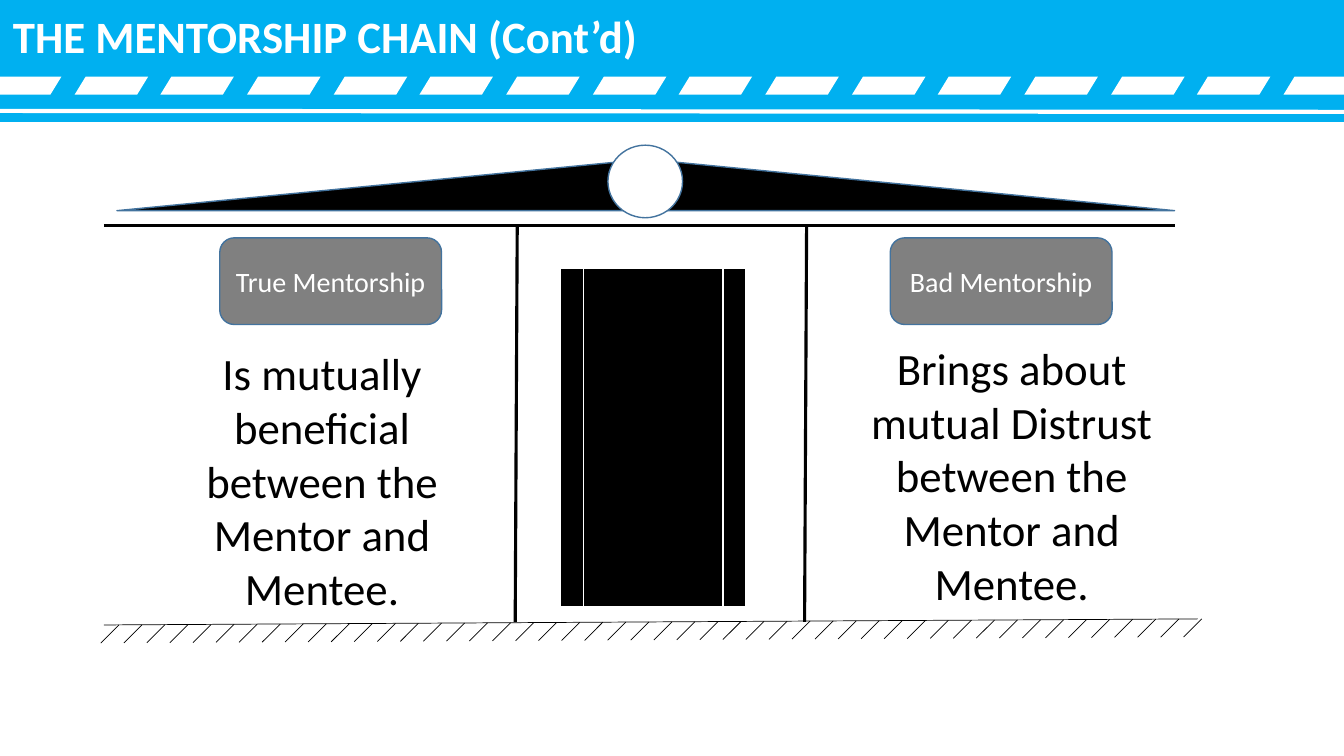
from lxml import etree
from pptx import Presentation
from pptx.dml.color import RGBColor
from pptx.enum import shapes, text
from pptx.oxml.ns import qn
from pptx.util import Pt

PX = 9144
FONT = "Calibri"
COLORS = {
    "sky": "00B0F0",
    "white": "FFFFFF",
    "black": "000000",
    "gray": "808080",
    "edge": "43739E",
}
SHAPE = shapes.MSO_SHAPE


def rgb(name):
    return RGBColor.from_string(COLORS[name])


def paint(item, fill, edge=None):
    item.shadow.inherit = False
    item.fill.solid()
    item.fill.fore_color.rgb = rgb(fill)
    if edge:
        item.line.color.rgb = rgb(edge)
        item.line.width = Pt(1)
    else:
        item.line.fill.background()
    return item


def add_figure(parent, kind, box, fill, edge=None):
    return paint(parent.add_shape(kind, *(n * PX for n in box)), fill, edge)


def add_line(parent, start, end, color, width):
    ends = (round(n * PX) for n in (*start, *end))
    line = parent.add_connector(shapes.MSO_CONNECTOR.STRAIGHT, *ends)
    line.line.color.rgb = rgb(color)
    line.line.width = Pt(width)
    etree.SubElement(line._element.spPr, qn("a:effectLst"))


def write(frame, words, size, color, align, bold=False):
    frame.word_wrap = True
    paragraph = frame.paragraphs[0]
    paragraph.alignment = align
    run = paragraph.add_run()
    run.text = words
    run.font.name = FONT
    run.font.size = Pt(size)
    run.font.bold = bold
    run.font.color.rgb = rgb(color)


def add_text(parent, box, words, color, align, bold=False):
    frame = parent.add_textbox(*(n * PX for n in box)).text_frame
    frame.auto_size = text.MSO_AUTO_SIZE.SHAPE_TO_FIT_TEXT
    write(frame, words, 32, color, align, bold)


def add_label(parent, left, words):
    label = add_figure(parent, SHAPE.ROUNDED_RECTANGLE,
                       (left, 236, 220, 86), "gray", "edge")
    label.text_frame.vertical_anchor = text.MSO_ANCHOR.MIDDLE
    write(label.text_frame, words, 20, "white", text.PP_ALIGN.CENTER)


def add_dashes(parent, count=16, first=-12, last=1273, top=76, bottom=94):
    dashes = parent.add_group_shape().shapes
    for i in range(count):
        left = round(first + (last - first) * i / (count - 1))
        outline = dashes.build_freeform(left + 11, top, scale=PX)
        outline.add_line_segments(
            [(left + 73, top), (left + 62, bottom), (left, bottom)], close=True)
        paint(outline.convert_to_shape(), "white")


def add_ground(parent, count=48, first=118, last=1192, slant=18):
    add_line(parent, (103, 620), (1188, 614), "black", 0.5)
    for i in range(count):
        part = i / (count - 1)
        x = first + (last - first) * part
        y = 620 - 6 * part
        add_line(parent, (x, y), (x - slant, y + slant), "black", 0.5)


def add_house(parent):
    house = parent.add_group_shape().shapes
    add_line(house, (103, 224), (1165, 224), "black", 2.25)
    add_figure(house, SHAPE.ISOSCELES_TRIANGLE, (116, 158, 1049, 51),
               "black", "edge")
    for pillar in (513, 800):
        add_line(house, (pillar, 224), (pillar - 2, 617), "black", 2.25)
    add_figure(house, SHAPE.OVAL, (603, 144, 74, 72), "white", "edge")
    add_figure(house, SHAPE.FLOWCHART_PREDEFINED_PROCESS,
               (556, 266, 184, 336), "black", "white")
    add_ground(house)


def main():
    deck = Presentation()
    deck.slide_width = 1333 * PX
    deck.slide_height = 750 * PX
    canvas = deck.slides.add_slide(deck.slide_layouts[6]).shapes

    add_figure(canvas, SHAPE.RECTANGLE, (0, 0, 1333, 121), "sky")
    add_dashes(canvas)
    add_line(canvas, (0, 110), (1333, 111), "white", 3)
    add_text(canvas, (3, 4, 657, 64), "THE MENTORSHIP CHAIN (Cont’d)",
             "white", text.PP_ALIGN.LEFT, bold=True)
    add_text(canvas, (191, 338, 257, 279),
             "Is mutually beneficial between the Mentor and Mentee.",
             "black", text.PP_ALIGN.CENTER)
    add_text(canvas, (848, 333, 311, 279),
             "Brings about mutual Distrust between the Mentor and Mentee.",
             "black", text.PP_ALIGN.CENTER)
    add_label(canvas, 218, "True Mentorship")
    add_label(canvas, 883, "Bad Mentorship")
    add_house(canvas)

    deck.save("out.pptx")


if __name__ == "__main__":
    main()
